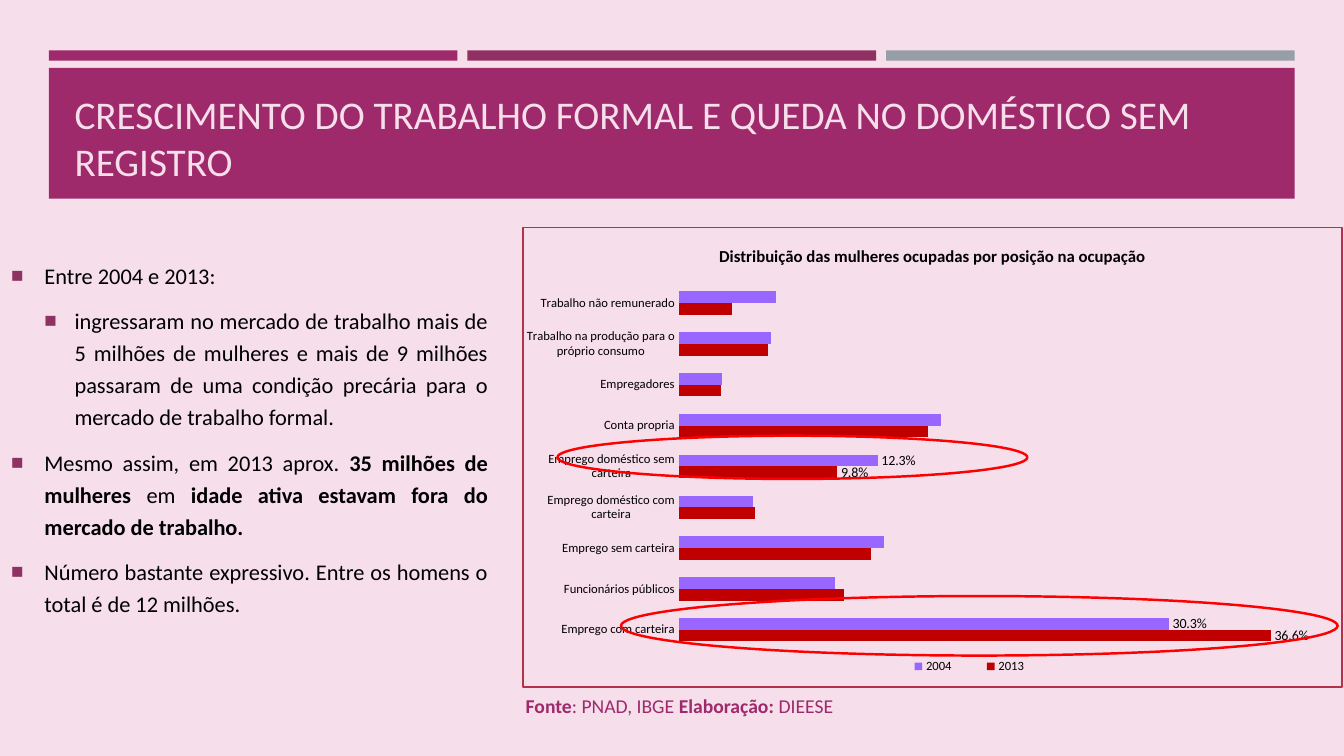
from collections import namedtuple

from lxml import etree
from pptx import Presentation
from pptx import util as u
from pptx.chart import data as chart_data
from pptx.dml.color import RGBColor
from pptx.enum import chart as charts, shapes, text
from pptx.oxml import parse_xml
from pptx.oxml.ns import nsdecls, qn

Box = namedtuple("Box", "left top width height")  # centimetres

FONT = "Calibri"
COLORS = {
    "background": "F6DEEB",
    "magenta": "9E296B",
    "plum": "903163",
    "gray": "969FA7",
    "black": "000000",
    "border": "B2324B",
    "highlight": "FF0000",
    "2013": "C00000",
    "2004": "9966FF",
}
CATEGORIES = [
    "Emprego com carteira",
    "Funcionários públicos",
    "Emprego sem carteira",
    "Emprego doméstico com carteira",
    "Emprego doméstico sem carteira",
    "Conta propria",
    "Empregadores",
    "Trabalho na produção para o próprio consumo",
    "Trabalho não remunerado",
]
SHARES = {
    "2013": [0.366, 0.102, 0.119, 0.047, 0.098, 0.154, 0.026, 0.055, 0.033],
    "2004": [0.303, 0.097, 0.127, 0.046, 0.123, 0.162, 0.027, 0.057, 0.06],
}
LABELLED_POINTS = [0, 4]

# (text indent in cm, bullet width in cm, [(text, bold), ...])
FINDINGS = [
    (0.84, 0.84, [("Entre 2004 e 2013:", False)]),
    (1.6, 0.76, [("ingressaram no mercado de trabalho mais de 5 milhões de mulheres "
                  "e mais de 9 milhões passaram de uma condição precária para o "
                  "mercado de trabalho formal.", False)]),
    (0.84, 0.84, [("Mesmo assim, em 2013 aprox. ", False),
                  ("35 milhões de mulheres ", True),
                  ("em ", False),
                  ("idade ativa estavam fora do mercado de trabalho.", True)]),
    (0.84, 0.84, [("Número bastante expressivo. Entre os homens o total é de "
                   "12 milhões.", False)]),
]
SOURCE = [("Fonte", True), (": PNAD, IBGE ", False),
          ("Elaboração: ", True), ("DIEESE", False)]


def color(name):
    return RGBColor.from_string(COLORS[name])


def lengths(box):
    return [u.Cm(value) for value in box]


def inside(box, left, top, width, height):
    """Place a box relative to the top left corner of another."""
    return Box(box.left + left, box.top + top, width, height)


def style(font, size, color_name, bold=False):
    font.name = FONT
    font.size = u.Pt(size)
    font.bold = bold
    font.color.rgb = color(color_name)


def add_spans(para, spans, size, color_name):
    for words, bold in spans:
        span = para.add_run()
        span.text = words
        style(span.font, size, color_name, bold)


def add_frame(page, box, anchor):
    frame = page.shapes.add_textbox(*lengths(box)).text_frame
    frame.word_wrap = True
    frame.vertical_anchor = anchor
    return frame


def add_bar(page, box, color_name):
    bar = page.shapes.add_shape(shapes.MSO_SHAPE.RECTANGLE, *lengths(box))
    bar.shadow.inherit = False
    bar.fill.solid()
    bar.fill.fore_color.rgb = color(color_name)
    bar.line.fill.background()


def add_highlight(page, box):
    ring = page.shapes.add_shape(shapes.MSO_SHAPE.OVAL, *lengths(box))
    ring.shadow.inherit = False
    ring.fill.background()
    ring.line.color.rgb = color("highlight")
    ring.line.width = u.Pt(1.75)


def add_header(page, box):
    gap = 0.25
    width = (box.width - 2 * gap) / 3
    for index, name in enumerate(["magenta", "plum", "gray"]):
        add_bar(page, inside(box, index * (width + gap), 0, width, 0.26), name)
    add_bar(page, inside(box, 0, 0.44, box.width, box.height - 0.44), "magenta")
    frame = add_frame(page, inside(box, 0.4, 0.69, box.width - 0.8, 2.82),
                      text.MSO_ANCHOR.BOTTOM)
    title = frame.paragraphs[0]
    title.text = "CRESCIMENTO DO TRABALHO FORMAL E QUEDA NO DOMÉSTICO SEM REGISTRO"
    style(title.runs[0].font, 28, "background")


def add_bullet(para, indent, hanging):
    props = para._p.get_or_add_pPr()
    props.set("marL", str(u.Cm(indent)))
    props.set("indent", str(-u.Cm(hanging)))
    bullet_color = etree.SubElement(props, qn("a:buClr"))
    etree.SubElement(bullet_color, qn("a:srgbClr"), val=COLORS["plum"])
    etree.SubElement(props, qn("a:buSzPct"), val="92000")
    etree.SubElement(props, qn("a:buFont"), typeface="Arial")
    etree.SubElement(props, qn("a:buChar"), char="■")


def add_findings(page, box):
    frame = add_frame(page, box, text.MSO_ANCHOR.MIDDLE)
    for index, (indent, hanging, spans) in enumerate(FINDINGS):
        para = frame.add_paragraph() if index else frame.paragraphs[0]
        para.alignment = text.PP_ALIGN.JUSTIFY
        para.line_spacing = 1.2
        para.space_before = u.Pt(3.2)
        para.space_after = u.Pt(6)
        add_bullet(para, indent, hanging)
        add_spans(para, spans, 16, "black")


def chart_layout(x, y, w, h, inner=False):
    """Manual chart layout, in fractions of the chart area."""
    target = '<c:layoutTarget val="inner"/>' if inner else ""
    sizes = "".join(f'<c:{key} val="{value}"/>'
                    for key, value in zip("xywh", (x, y, w, h)))
    return parse_xml(
        f'<c:layout {nsdecls("c")}><c:manualLayout>{target}'
        f'<c:xMode val="edge"/><c:yMode val="edge"/>{sizes}'
        '</c:manualLayout></c:layout>')


def arrange_chart(chart):
    """Fix the plot and legend areas and outline the chart."""
    root = chart.element
    plot_area = root.find(".//" + qn("c:plotArea"))
    for layout in plot_area.findall(qn("c:layout")):
        plot_area.remove(layout)
    plot_area.insert(0, chart_layout(0.19, 0.12, 0.79, 0.8, inner=True))
    root.find(".//" + qn("c:legendPos")).addnext(chart_layout(0.44, 0.93, 0.21, 0.05))
    root.find(qn("c:chart")).addnext(parse_xml(
        f'<c:spPr {nsdecls("c", "a")}><a:noFill/><a:ln w="12700"><a:solidFill>'
        f'<a:srgbClr val="{COLORS["border"]}"/></a:solidFill></a:ln></c:spPr>'))


def add_occupation_chart(page, box):
    values = chart_data.CategoryChartData(number_format="0.0%")
    values.categories = CATEGORIES
    for year, shares in SHARES.items():
        values.add_series(year, shares)
    chart = page.shapes.add_chart(charts.XL_CHART_TYPE.BAR_CLUSTERED,
                                  *lengths(box), values).chart
    style(chart.font, 10, "black")

    title = chart.chart_title.text_frame.paragraphs[0]
    title.text = "Distribuição das mulheres ocupadas por posição na ocupação"
    style(title.runs[0].font, 12, "black", bold=True)
    chart.chart_title.include_in_layout = False

    chart.has_legend = True
    chart.legend.position = charts.XL_LEGEND_POSITION.BOTTOM
    chart.legend.include_in_layout = False
    style(chart.legend.font, 9, "black")

    chart.category_axis.major_tick_mark = charts.XL_TICK_MARK.NONE
    chart.category_axis.format.line.fill.background()
    style(chart.category_axis.tick_labels.font, 9, "black")
    chart.value_axis.minimum_scale = 0
    chart.value_axis.maximum_scale = 0.4
    chart.value_axis.has_major_gridlines = False
    chart.value_axis.visible = False

    plot = chart.plots[0]
    plot.vary_by_categories = False
    plot.gap_width = 150
    plot.overlap = 0
    for series in plot.series:
        series.invert_if_negative = False
        series.format.fill.solid()
        series.format.fill.fore_color.rgb = color(series.name)
        series.data_labels.show_value = False
        for index in LABELLED_POINTS:
            style(series.points[index].data_label.font, 10, "black")
    arrange_chart(chart)

    add_highlight(page, inside(box, 0.89, 5.26, 11.84, 1.09))
    add_highlight(page, inside(box, 2.49, 9.3, 18.06, 1.5))


def add_source(page, box):
    frame = add_frame(page, box, text.MSO_ANCHOR.TOP)
    add_spans(frame.paragraphs[0], SOURCE, 14, "magenta")


def main():
    deck = Presentation()
    deck.slide_width, deck.slide_height = u.Cm(33.87), u.Cm(19.05)
    page = deck.slides.add_slide(deck.slide_layouts[6])
    page.background.fill.solid()
    page.background.fill.fore_color.rgb = color("background")
    add_header(page, Box(1.23, 1.27, 31.4, 3.74))
    add_findings(page, Box(0.03, 5.51, 12.52, 11))
    add_occupation_chart(page, Box(13.16, 5.72, 20.68, 11.61))
    add_source(page, Box(13, 17.35, 11.61, 0.86))
    deck.save("out.pptx")


if __name__ == "__main__":
    main()
